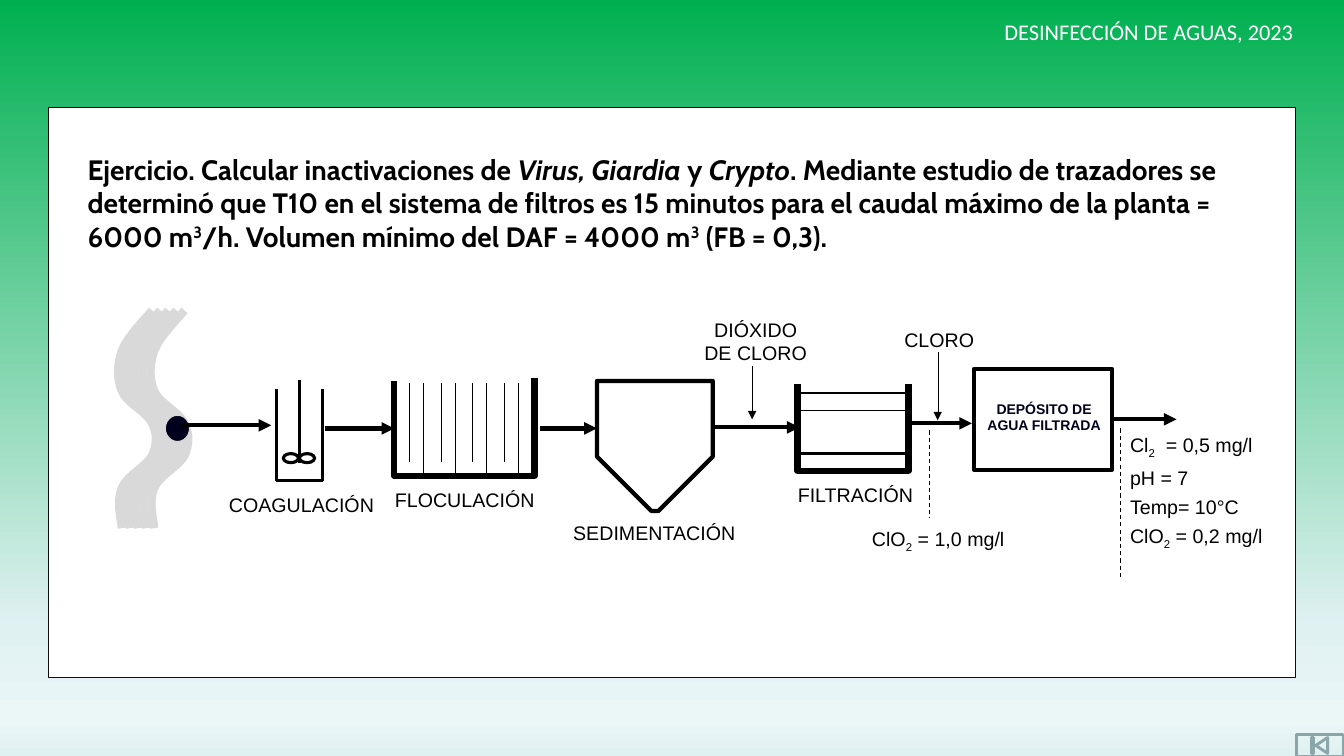
from dataclasses import dataclass

from lxml.etree import SubElement
from pptx import Presentation
from pptx.dml.color import RGBColor
from pptx.enum.dml import MSO_LINE
from pptx.enum.shapes import MSO_CONNECTOR, MSO_SHAPE as Preset
from pptx.enum.text import MSO_AUTO_SIZE, PP_ALIGN as Align
from pptx.oxml.ns import qn
from pptx.util import Inches, Pt

BLACK, WHITE, NAVY, RIVER_GREY = "000000", "FFFFFF", "00001C", "D9D9D9"
Point = tuple[float, float]


@dataclass
class Block:
    preset: Preset
    left: float
    top: float
    width: float
    height: float
    weight: float
    colour: str = BLACK
    fill: str | None = None


@dataclass
class Flow:
    start: Point
    end: Point
    weight: float = 3
    arrow: bool = True
    dashed: bool = False


@dataclass
class Span:
    text: str
    italic: bool = False
    baseline: int = 0


@dataclass
class Label:
    left: float
    top: float
    width: float
    height: float
    paras: list[list[Span]]
    size: float = 14
    font: str = "Arial"
    colour: str = BLACK
    bold: bool = False
    align: Align = Align.CENTER
    gap: float = 0


def rgb(colour: str) -> RGBColor:
    return RGBColor.from_string(colour)


def style(shape, weight: float, colour: str, fill: str | None = None) -> None:
    shape.shadow.inherit = False
    if fill:
        shape.fill.solid()
        shape.fill.fore_color.rgb = rgb(fill)
    else:
        shape.fill.background()
    shape.line.width = Pt(weight)
    shape.line.color.rgb = rgb(colour)


def draw_block(page, block: Block):
    shape = page.shapes.add_shape(block.preset, Inches(block.left), Inches(block.top),
                                  Inches(block.width), Inches(block.height))
    style(shape, block.weight, block.colour, block.fill)
    return shape


def draw_outline(page, points: list[Point], weight: float, colour: str = BLACK):
    corners = [(Inches(x), Inches(y)) for x, y in points]
    builder = page.shapes.build_freeform(*corners[0])
    builder.add_line_segments(corners[1:], close=False)
    shape = builder.convert_to_shape()
    style(shape, weight, colour)
    return shape


def bend(shape) -> None:
    segments = list(shape._element.iter(qn("a:lnTo")))
    for first in range(0, len(segments), 3):
        curve = SubElement(segments[first].getparent(), qn("a:cubicBezTo"))
        for segment in segments[first:first + 3]:
            curve.append(segment[0])
            segment.getparent().remove(segment)


def draw_flow(page, flow: Flow):
    connector = page.shapes.add_connector(
        MSO_CONNECTOR.STRAIGHT, *(Inches(value) for value in flow.start + flow.end))
    connector.line.width = Pt(flow.weight)
    connector.line.color.rgb = rgb(BLACK)
    if flow.dashed:
        connector.line.dash_style = MSO_LINE.DASH
    properties = connector._element.spPr
    if flow.arrow:
        SubElement(properties.find(qn("a:ln")), qn("a:tailEnd"), type="triangle")
    SubElement(properties, qn("a:effectLst"))
    return connector


def draw_label(page, label: Label) -> None:
    box = page.shapes.add_textbox(Inches(label.left), Inches(label.top),
                                  Inches(label.width), Inches(label.height))
    frame = box.text_frame
    frame.word_wrap = True
    frame.auto_size = MSO_AUTO_SIZE.SHAPE_TO_FIT_TEXT
    for index, spans in enumerate(label.paras):
        para = frame.add_paragraph() if index else frame.paragraphs[0]
        para.alignment = label.align
        para.space_before = para.space_after = Pt(label.gap)
        para.font.name, para.font.size = label.font, Pt(label.size)
        para.font.bold, para.font.color.rgb = label.bold, rgb(label.colour)
        for span in spans:
            run = para.add_run()
            run.text = span.text
            if span.italic:
                run.font.italic = True
            if span.baseline:
                run._r.get_or_add_rPr().set("baseline", str(span.baseline * 1000))


def paint_background(page, stops: list[tuple[int, str]]) -> None:
    fill = page.background.fill
    fill.gradient()
    fill.gradient_angle = 270
    stop_list = page._element.find(".//" + qn("a:gsLst"))
    stop_list.clear()
    for position, colour in stops:
        stop = SubElement(stop_list, qn("a:gs"), pos=str(position * 1000))
        SubElement(stop, qn("a:srgbClr"), val=colour)


RIVER = [(1.51, 3.08), (1.39, 3.22), (1.26, 3.35), (1.21, 3.48), (1.16, 3.62), (1.16, 3.76),
         (1.21, 3.88), (1.26, 4), (1.46, 4.09), (1.51, 4.2), (1.56, 4.3), (1.56, 4.41),
         (1.51, 4.52), (1.46, 4.62), (1.26, 4.72), (1.21, 4.84), (1.16, 4.96), (1.19, 5.1),
         (1.21, 5.24)]
BLOCKS = [
    Block(Preset.OVAL, 1.64, 4.12, 0.24, 0.26, 0.75, RIVER_GREY, NAVY),
    Block(Preset.OVAL, 2.81, 4.5, 0.15, 0.09, 2.25),
    Block(Preset.OVAL, 2.97, 4.5, 0.15, 0.09, 2.25),
    Block(Preset.RECTANGLE, 7.91, 3.9, 1.1, 0.6, 1),
    Block(Preset.RECTANGLE, 7.91, 4.5, 1.1, 0.17, 2.25),
    Block(Preset.RECTANGLE, 7.91, 4.07, 1.1, 0.43, 0.75),
]
TANKS = [
    [(3.91, 3.78), (3.91, 4.72), (5.3, 4.72), (5.3, 3.75)],
    [(7.91, 3.81), (7.91, 4.67), (9.01, 4.67), (9.01, 3.81)],
]
FLOWS = [
    Flow((1.8, 4.22), (2.69, 4.22)),
    Flow((3.22, 4.25), (3.91, 4.25)),
    Flow((5.36, 4.25), (5.92, 4.25)),
    Flow((7.07, 4.24), (7.93, 4.24)),
    Flow((9.01, 4.2), (9.64, 4.2)),
    Flow((7.46, 3.63), (7.46, 4.16), 0.25),
    Flow((9.3, 3.49), (9.3, 4.17), 0.25),
    Flow((2.74, 4.77), (3.2, 4.77), 2.25, False),
    Flow((2.74, 3.86), (2.74, 4.77), 2.25, False),
    Flow((3.2, 3.86), (3.2, 4.77), 2.25, False),
    Flow((2.97, 4.59), (2.97, 3.77), 2.25, False),
    Flow((9.22, 4.27), (9.22, 5.13), 0.75, False, True),
    Flow((11.11, 4.25), (11.11, 5.72), 0.75, False, True),
]
SUB_TWO = Span("2", baseline=-25)
CUBED = Span("3", baseline=30)
LABELS = [
    Label(9.81, 0.13, 3.17, 0.37, [[Span("DESINFECCIÓN DE AGUAS, 2023")]], 16, "Calibri", WHITE),
    Label(0.77, 1.46, 11.92, 1.11, [[
        Span("Ejercicio. Calcular inactivaciones de "), Span("Virus, Giardia ", True),
        Span("y "), Span("Crypto", True),
        Span(". Mediante estudio de trazadores se determinó que T10 en el sistema de filtros "
             "es 15 minutos para el caudal máximo de la planta = 6000 m"), CUBED,
        Span("/h. Volumen mínimo del DAF = 4000 m"), CUBED, Span(" (FB = 0,3)."),
    ]], 20, "Cabin", bold=True, align=Align.LEFT),
    Label(2.08, 4.84, 1.82, 0.34, [[Span("COAGULACIÓN")]]),
    Label(3.7, 4.79, 1.82, 0.34, [[Span("FLOCULACIÓN")]]),
    Label(5.49, 5.12, 2, 0.34, [[Span("SEDIMENTACIÓN")]]),
    Label(7.76, 4.74, 1.45, 0.34, [[Span("FILTRACIÓN")]]),
    Label(6.83, 3.1, 1.33, 0.57, [[Span("DIÓXIDO DE CLORO")]]),
    Label(8.59, 3.2, 1.45, 0.34, [[Span("CLORO")]]),
    Label(9.67, 3.92, 1.37, 0.48, [[Span("DEPÓSITO DE AGUA FILTRADA")]], 10, colour=NAVY, bold=True),
    Label(8.55, 5.18, 1.68, 0.35, [[Span("ClO"), SUB_TWO, Span(" = 1,0 mg/l")]],
          align=Align.LEFT, gap=2),
    Label(11.11, 4.25, 1.57, 1.25,
          [[Span("Cl"), SUB_TWO, Span("  = 0,5 mg/l")], [Span("pH = 7")], [Span("Temp= 10°C")],
           [Span("ClO"), SUB_TWO, Span(" = 0,2 mg/l")]], align=Align.LEFT, gap=2),
]


def main() -> None:
    deck = Presentation()
    deck.slide_width, deck.slide_height = Inches(13.33), Inches(7.5)
    page = deck.slides.add_slide(deck.slide_layouts[6])
    paint_background(page, [(0, "00B050"), (83, "E0F1F2"), (95, "EBF6F7"), (100, "E0F1F2")])
    draw_block(page, Block(Preset.ACTION_BUTTON_BEGINNING, 12.86, 7.29, 0.46, 0.21, 2, "8AA6A8"))
    draw_block(page, Block(Preset.RECTANGLE, 0.48, 1.07, 12.37, 5.65, 0.75, "0D0D0D", WHITE))
    for strand in range(5):
        bend(draw_outline(page, [(x + 0.08 * strand, y) for x, y in RIVER], 6, RIVER_GREY))
    for block in BLOCKS:
        draw_block(page, block)
    for tank in TANKS:
        draw_outline(page, tank, 4.5)
    settler = draw_block(page, Block(Preset.SNIP_2_SAME_RECTANGLE, 5.92, 3.78, 1.15, 1.29, 3))
    settler.rotation = 180
    settler.adjustments[0], settler.adjustments[1] = 0.471, 0
    reservoir = draw_block(page, Block(Preset.RECTANGLE, 9.66, 3.66, 1.37, 1, 3))
    baffles = [Flow((x + 0.315 * pair, 3.8), (x + 0.315 * pair, bottom), 0.75, False)
               for pair in range(4) for x, bottom in ((4.06, 4.58), (4.2, 4.72))]
    for flow in FLOWS + baffles:
        draw_flow(page, flow)
    draw_flow(page, Flow((11.03, 4.16), (11.67, 4.16))).begin_connect(reservoir, 3)
    for label in LABELS:
        draw_label(page, label)
    deck.save("out.pptx")


if __name__ == "__main__":
    main()
